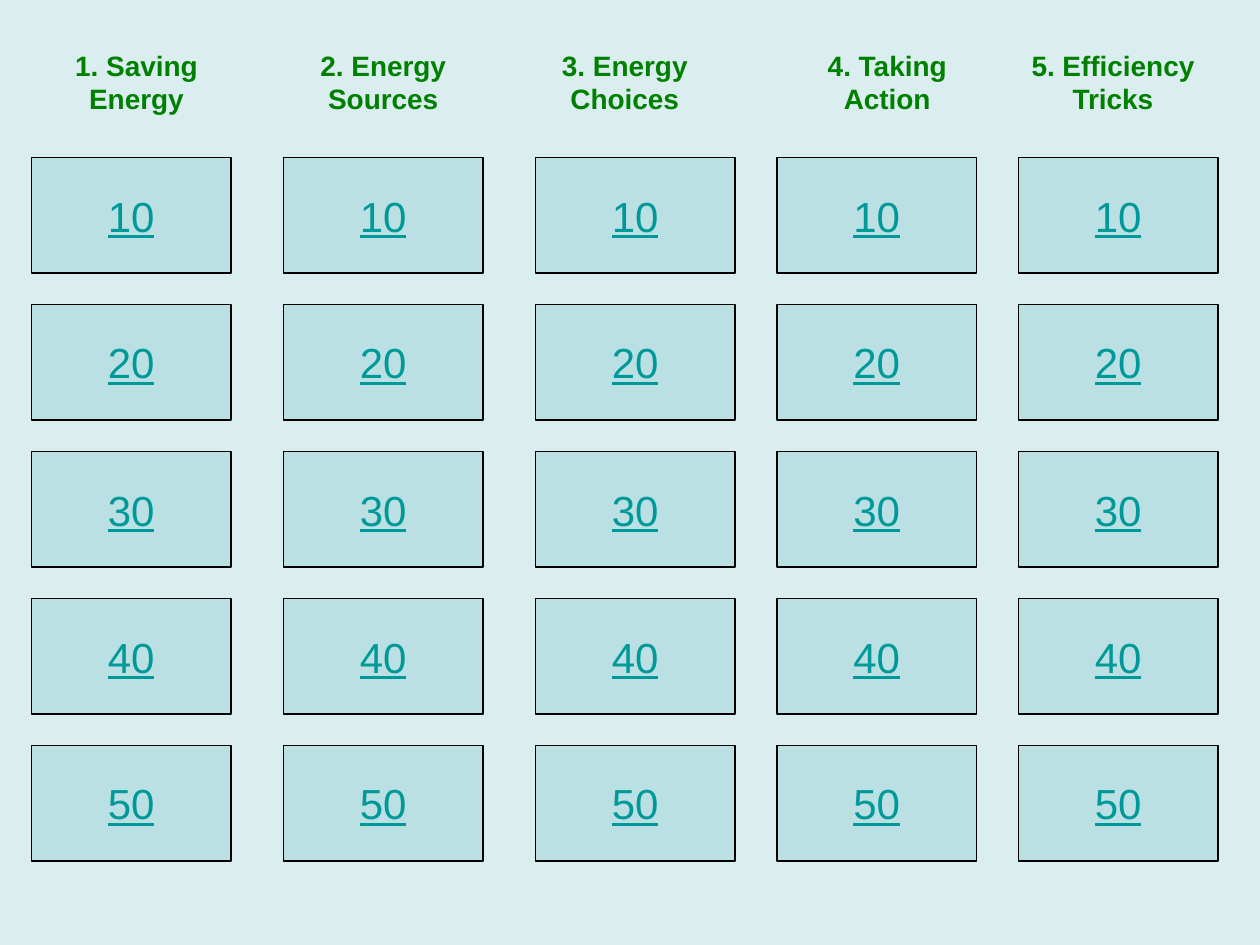
from pptx import Presentation
from pptx import util as u
from pptx.dml import color
from pptx.enum import shapes, text


def tint(code):
    return color.RGBColor.from_string(code)


def write(frame, words, size, code):
    para = frame.paragraphs[0]
    para.alignment = text.PP_ALIGN.CENTER
    run = para.add_run()
    run.text = words
    run.font.name = "Arial"
    run.font.size = u.Pt(size)
    run.font.color.rgb = tint(code)
    return run.font


deck = Presentation()
deck.slide_width = u.Pt(720)
deck.slide_height = u.Pt(540)
slide = deck.slides.add_slide(deck.slide_layouts[6])
slide.background.fill.solid()
slide.background.fill.fore_color.rgb = tint("DAEDEF")

topics = [
    ("1. Saving Energy", 18, 120, 18),
    ("2. Energy Sources", 174, 90, 162),
    ("3. Energy Choices", 312, 90, 306),
    ("4. Taking Action", 456, 102, 444),
    ("5. Efficiency Tricks", 582, 108, 582),
]

for title, left, width, edge in topics:
    head = slide.shapes.add_textbox(u.Pt(left), u.Pt(24), u.Pt(width), u.Pt(46))
    head.text_frame.word_wrap = True
    head.text_frame.auto_size = text.MSO_AUTO_SIZE.SHAPE_TO_FIT_TEXT
    write(head.text_frame, title, 16, "008000").bold = True

    for row in range(5):
        card = slide.shapes.add_shape(
            shapes.MSO_SHAPE.ACTION_BUTTON_CUSTOM,
            u.Pt(edge), u.Pt(90 + 84 * row), u.Pt(114), u.Pt(66))
        card.shadow.inherit = False
        card.fill.solid()
        card.fill.fore_color.rgb = tint("BBE0E3")
        card.line.color.rgb = tint("000000")
        card.line.width = u.Pt(0.75)
        card.text_frame.word_wrap = False
        card.text_frame.vertical_anchor = text.MSO_ANCHOR.MIDDLE
        write(card.text_frame, str(10 * (row + 1)), 24, "009999").underline = True

deck.save("out.pptx")
